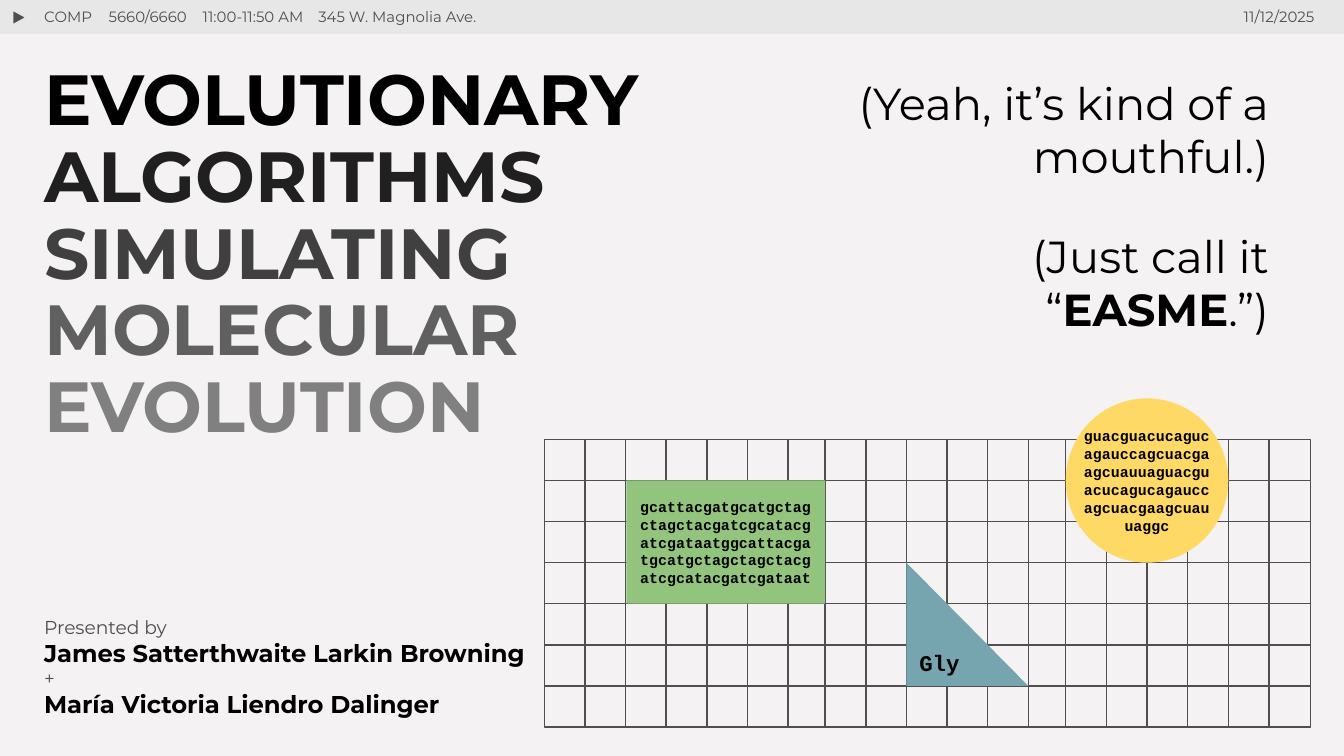
import pptx
import pptx.dml.color
import pptx.enum.shapes
import pptx.enum.text
import pptx.oxml.ns
import pptx.util
from lxml import etree

Inches = pptx.util.Inches
Pt = pptx.util.Pt
SHAPE = pptx.enum.shapes.MSO_SHAPE
ALIGN = pptx.enum.text.PP_ALIGN
ANCHOR = pptx.enum.text.MSO_ANCHOR
qn = pptx.oxml.ns.qn

COLORS = {
    "background": "F4F2F2", "bar": "E7E7E7", "gray": "4F4F4F", "black": "000000",
    "green": "93C47D", "yellow": "FFD966", "teal": "76A5AF",
}
TITLE = [("EVOLUTIONARY ", "000000"), ("ALGORITHMS ", "202020"), ("SIMULATING ", "404040"),
         ("MOLECULAR ", "606060"), ("EVOLUTION", "808080")]
DNA = "gcattacgatgcatgctagctagctacgatcgcatacgatcgataatggcattacgatgcatgctagctagctacgatcgcatacgatcgataat"
RNA = "guacguacucagucagauccagcuacgaagcuauuaguacguacucagucagauccagcuacgaagcuauuaggc"
COLUMNS, ROWS = 19, 7


def rgb(value):
    return pptx.dml.color.RGBColor.from_string(value)


def box(x, y, w, h):
    return Inches(x), Inches(y), Inches(w), Inches(h)


def add_run(p, text, size, color=COLORS["black"], bold=False, font="Montserrat"):
    r = p.add_run()
    r.text = text
    r.font.size, r.font.bold, r.font.name = Pt(size), bold, font
    r.font.color.rgb = rgb(color)


def set_frame(tf, anchor=ANCHOR.TOP, x_inset=0.1, y_inset=0.1):
    tf.word_wrap = True
    tf.auto_size = pptx.enum.text.MSO_AUTO_SIZE.NONE
    tf.vertical_anchor = anchor
    tf.margin_left = tf.margin_right = Inches(x_inset)
    tf.margin_top = tf.margin_bottom = Inches(y_inset)


def add_text(s, x, y, w, h, align=ALIGN.LEFT, **frame):
    """Add a text box and return its text frame and first paragraph."""
    tf = s.shapes.add_textbox(*box(x, y, w, h)).text_frame
    set_frame(tf, **frame)
    p = tf.paragraphs[0]
    p.alignment = align
    return tf, p


def add_shape(s, kind, x, y, w, h, fill=None, line=None):
    sp = s.shapes.add_shape(kind, *box(x, y, w, h))
    sp.shadow.inherit = False
    if fill:
        sp.fill.solid()
        sp.fill.fore_color.rgb = rgb(COLORS[fill])
    else:
        sp.fill.background()
    if line:
        sp.line.color.rgb = rgb(COLORS[line])
        sp.line.width = Pt(0.75)
    else:
        sp.line.fill.background()
    return sp


def add_line(s, x1, y1, x2, y2):
    line = s.shapes.add_connector(pptx.enum.shapes.MSO_CONNECTOR.STRAIGHT,
                                  Inches(x1), Inches(y1), Inches(x2), Inches(y2))
    line.line.color.rgb = rgb(COLORS["gray"])
    line.line.width = Pt(0.75)
    etree.SubElement(line._element.spPr, qn("a:effectLst"))


def add_header(s, x, y, w, h):
    add_shape(s, SHAPE.RECTANGLE, x, y, w, h, "bar")
    marker = add_shape(s, SHAPE.ISOSCELES_TRIANGLE, x + 0.1, y + 0.08, 0.11, 0.1, "gray", "bar")
    marker.rotation = 90
    _, p = add_text(s, x + 0.24, y - 0.04, 4.17, 0.34)
    tabs = etree.SubElement(p._p.get_or_add_pPr(), qn("a:tabLst"))
    for stop in (0.48, 1.18, 2.04):
        etree.SubElement(tabs, qn("a:tab"), pos=str(Inches(stop)), algn="l")
    add_run(p, "COMP\t5660/6660\t11:00-11:50 AM\t345 W. Magnolia Ave.", 8, COLORS["gray"])
    _, p = add_text(s, x + w - 1.37, y - 0.04, 1.25, 0.34, ALIGN.RIGHT)
    add_run(p, "11/12/2025", 8, COLORS["gray"])


def add_title(s, x, y, w, h):
    sp = s.shapes.title
    sp.left, sp.top, sp.width, sp.height = box(x, y, w, h)
    set_frame(sp.text_frame)
    p = sp.text_frame.paragraphs[0]
    p.alignment, p.line_spacing = ALIGN.LEFT, 0.9
    for word, color in TITLE:
        add_run(p, word, 38, color, True)


def add_aside(s, x, y, w, h):
    tf, p = add_text(s, x, y, w, h, ALIGN.RIGHT)
    add_run(p, "(Yeah, it’s kind of a mouthful.)", 24)
    p = tf.add_paragraph()
    p.alignment, p.space_before = ALIGN.RIGHT, Pt(24.4)
    add_run(p, "(Just call it “", 24)
    add_run(p, "EASME", 24, bold=True)
    add_run(p, ".”)", 24)


def add_presenters(s, x, y, w, h):
    tf, p = add_text(s, x, y, w, h)
    for i, (label, name) in enumerate([("Presented by", "James Satterthwaite Larkin Browning"),
                                       ("+", "María Victoria Liendro Dalinger")]):
        if i:
            p = tf.add_paragraph()
        add_run(p, label, 10, COLORS["gray"])
        add_run(tf.add_paragraph(), name, 13, bold=True)


def add_grid(s, x, y, w, h):
    """Draw three blocks of equal columns, then the sequence shapes on them."""
    add_shape(s, SHAPE.RECTANGLE, x, y, w, h, line="gray")
    middle, right = x + 2.09, x + 3.88
    cell_w, cell_h = (w - 3.88) / 6.02, h / ROWS
    cell_w = min(cell_w, 0.3 + 0.06 / COLUMNS)
    for start, first, last in ((x, 1, 6), (middle, 0, 5), (right, 0, 5)):
        for i in range(first, last + 1):
            add_line(s, start + i * cell_w, y, start + i * cell_w, y + h)
    for i in range(1, ROWS):
        add_line(s, x, y + i * cell_h, x + w, y + i * cell_h)

    def code(p, text, size):
        add_run(p, text, size, bold=True, font="Courier New")

    dna = add_shape(s, SHAPE.RECTANGLE, x + 0.61, y + cell_h, 1.48, 3 * cell_h, "green")
    set_frame(dna.text_frame, ANCHOR.MIDDLE, y_inset=0.05)
    dna.text_frame.paragraphs[0].alignment = ALIGN.CENTER
    code(dna.text_frame.paragraphs[0], DNA, 8)

    circle = (right, y - cell_h, 4 * cell_w, 4 * cell_h)
    add_shape(s, SHAPE.OVAL, *circle, "yellow")
    _, p = add_text(s, *circle, ALIGN.CENTER, anchor=ANCHOR.MIDDLE, x_inset=0.12, y_inset=0.05)
    code(p, RNA, 8)

    gly = add_shape(s, SHAPE.RIGHT_TRIANGLE, middle + 2 * cell_w, y + 3 * cell_h,
                    3 * cell_w, 3 * cell_h, "teal")
    set_frame(gly.text_frame, ANCHOR.BOTTOM, 0.02, 0)
    gly.text_frame.paragraphs[0].alignment = ALIGN.LEFT
    code(gly.text_frame.paragraphs[0], "Gly", 12)


def main():
    prs = pptx.Presentation()
    prs.slide_width = Inches(10)
    prs.slide_height = prs.slide_width * 9 // 16
    s = prs.slides.add_slide(prs.slide_layouts[5])
    s.background.fill.solid()
    s.background.fill.fore_color.rgb = rgb(COLORS["background"])
    add_header(s, -0.01, 0, 10.01, 0.25)
    add_aside(s, 6, 0.46, 3.54, 2.11)
    add_title(s, 0.23, 0.38, 4.77, 2.89)
    add_presenters(s, 0.23, 4.48, 3.82, 0.94)
    add_grid(s, 4.05, 3.27, 5.7, 2.14)
    prs.save("out.pptx")


if __name__ == "__main__":
    main()
